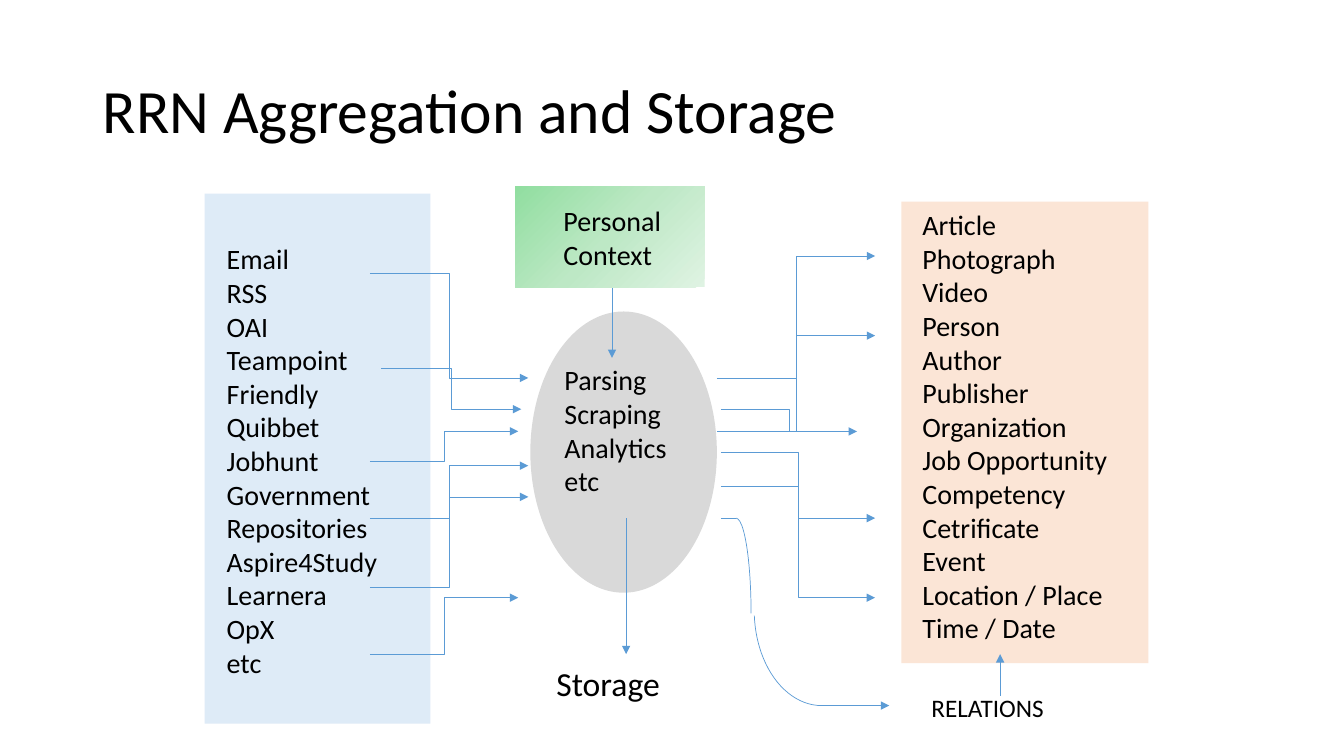
from collections import namedtuple

from lxml import etree
from pptx import Presentation
from pptx.dml.color import RGBColor
from pptx.enum.shapes import MSO_CONNECTOR, MSO_SHAPE
from pptx.enum.text import MSO_ANCHOR
from pptx.oxml import parse_xml
from pptx.oxml.ns import nsdecls, qn
from pptx.util import Inches, Pt

prs = Presentation()
prs.slide_width, prs.slide_height = Inches(13.33), Inches(7.5)
COL, ROW = prs.slide_width / 13.33, prs.slide_height / 7.5
BLUE = "5B9BD5"

Box = namedtuple("Box", "x y w h")

SOURCES = ["Email", "RSS", "OAI", "Teampoint", "Friendly", "Quibbet", "Jobhunt",
           "Government", "Repositories", "Aspire4Study", "Learnera", "OpX", "etc"]
STEPS = ["Parsing", "Scraping", "Analytics", "etc"]
ENTITIES = ["Article", "Photograph", "Video", "Person", "Author", "Publisher",
            "Organization", "Job Opportunity", "Competency", "Cetrificate",
            "Event", "Location / Place", "Time / Date"]
# Each link: start x, start y, end x, end y within its box
IN_LINKS = [(0, 0, 1.57, 1.04), (0.11, 0.94, 1.5, 1.35), (0, 1.87, 1.47, 1.57),
            (0, 2.43, 1.57, 1.91), (0, 3.12, 1.57, 2.22), (0, 3.78, 1.47, 3.22)]
OUT_LINKS = [(0, 1.21, 1.57, 0), (0.04, 1.52, 1.39, 1.74), (0, 1.74, 1.57, 0.79),
             (0.04, 1.95, 1.57, 2.6), (0.04, 2.29, 1.57, 3.39)]


def color(value):
    return RGBColor.from_string(value)


def place(box, dx, dy, w, h):
    """Slide position and size of a part offset within a box."""
    return (round((box.x + dx) * COL), round((box.y + dy) * ROW),
            round(w * COL), round(h * ROW))


def add_shape(s, kind, pos, fill=None, line=None):
    sp = s.shapes.add_shape(kind, *pos)
    sp.shadow.inherit = False
    if fill:
        sp.fill.solid()
        sp.fill.fore_color.rgb = color(fill)
    else:
        sp.fill.background()
    if line:
        sp.line.color.rgb = color(line)
        sp.line.width = Pt(0.5)
    else:
        sp.line.fill.background()
    return sp


def add_text(s, pos, lines, size=20):
    tf = s.shapes.add_textbox(*pos).text_frame
    tf.word_wrap = True
    for i, text in enumerate(lines):
        p = tf.add_paragraph() if i else tf.paragraphs[0]
        r = p.add_run()
        r.text = text
        r.font.name, r.font.size = "Calibri", Pt(size)
        r.font.color.rgb = color("000000")
    return tf


def add_link(s, box, x1, y1, x2, y2, kind=MSO_CONNECTOR.STRAIGHT, arrow=True):
    start, end = place(box, x1, y1, 0, 0)[:2], place(box, x2, y2, 0, 0)[:2]
    cx = s.shapes.add_connector(kind, *start, *end)
    cx.line.color.rgb = color(BLUE)
    cx.line.width = Pt(0.5)
    if arrow:
        etree.SubElement(cx.line._get_or_add_ln(), qn("a:tailEnd"), type="triangle")
    etree.SubElement(cx._element.spPr, qn("a:effectLst"))


def title(s, box):
    tf = add_text(s, place(box, 0, 0, box.w, box.h), ["RRN Aggregation and Storage"], 44)
    tf.vertical_anchor = MSO_ANCHOR.MIDDLE
    tf.paragraphs[0].line_spacing = 0.9


def list_panel(s, box, fill, lines, dx, dy, width):
    add_shape(s, MSO_SHAPE.RECTANGLE, place(box, 0, 0, box.w, box.h), fill)
    add_text(s, place(box, dx, dy, width, 4.48), lines)


def context(s, box):
    sp = add_shape(s, MSO_SHAPE.RECTANGLE, place(box, 0, 0, box.w, box.h))
    stops = "".join(f'<a:gs pos="{pos}"><a:srgbClr val="{c}"/></a:gs>' for pos, c in
                    [(0, "91DEA0"), (50000, "BDE8C5"), (100000, "DFF3E3")])
    spPr = sp._element.spPr
    spPr.replace(spPr.find(qn("a:noFill")), parse_xml(
        f'<a:gradFill {nsdecls("a")}><a:gsLst>{stops}</a:gsLst><a:path path="circle">'
        '<a:fillToRect r="100000" b="100000"/></a:path></a:gradFill>'))
    add_text(s, place(box, 0.38, 0.12, 2.16, 0.77), ["Personal", "Context"])
    add_link(s, box, 0.96, 1.01, 0.96, 1.7)


def processor(s, box):
    add_shape(s, MSO_SHAPE.OVAL, place(box, 0, 0, box.w, box.h), "D9D9D9")
    add_text(s, place(box, 0.24, 0.46, 1.42, 1.45), STEPS)
    add_link(s, box, 0.95, 2.05, 0.95, 3.4)
    add_text(s, place(box, 0.16, 3.44, 1.64, 0.5), ["Storage"], 24)


def flow(s, box, links):
    for link in links:
        add_link(s, box, *link, kind=MSO_CONNECTOR.ELBOW)


def relations(s, box):
    """Curved path from the processor to the relations label."""
    add_link(s, box, 0, 0.03, 0.15, 0.03, arrow=False)
    add_shape(s, MSO_SHAPE.ARC, place(box, 0, 0.03, 0.3, 1.89), line=BLUE)
    sp = add_shape(s, MSO_SHAPE.ARC, place(box, 0.33, 0, 1.34, 1.89), line=BLUE)
    sp.adjustments[0], sp.adjustments[1] = 162, 213.26
    sp.rotation = 180
    add_link(s, box, 1, 1.89, 1.67, 1.89)
    add_text(s, place(box, 1.99, 1.71, 2.17, 0.4), ["RELATIONS"], 18)
    add_link(s, box, 2.77, 1.79, 2.77, 1.38)


def main():
    s = prs.slides.add_slide(prs.slide_layouts[6])
    title(s, Box(0.92, 0.4, 11.5, 1.45))
    list_panel(s, Box(2.03, 1.92, 2.24, 5.26), "DEEBF7", SOURCES, 0.12, 0.43, 2.33)
    list_panel(s, Box(8.94, 2, 2.45, 4.58), "FBE5D6", ENTITIES, 0.11, 0.01, 2.17)
    processor(s, Box(5.26, 3.09, 1.85, 2.79))
    context(s, Box(5.11, 1.85, 1.88, 1))
    flow(s, Box(3.67, 2.71, 1.57, 3.78), IN_LINKS)
    flow(s, Box(7.11, 2.54, 1.57, 3.39), OUT_LINKS)
    relations(s, Box(7.15, 5.11, 4.16, 2.11))
    prs.save("out.pptx")


if __name__ == "__main__":
    main()
